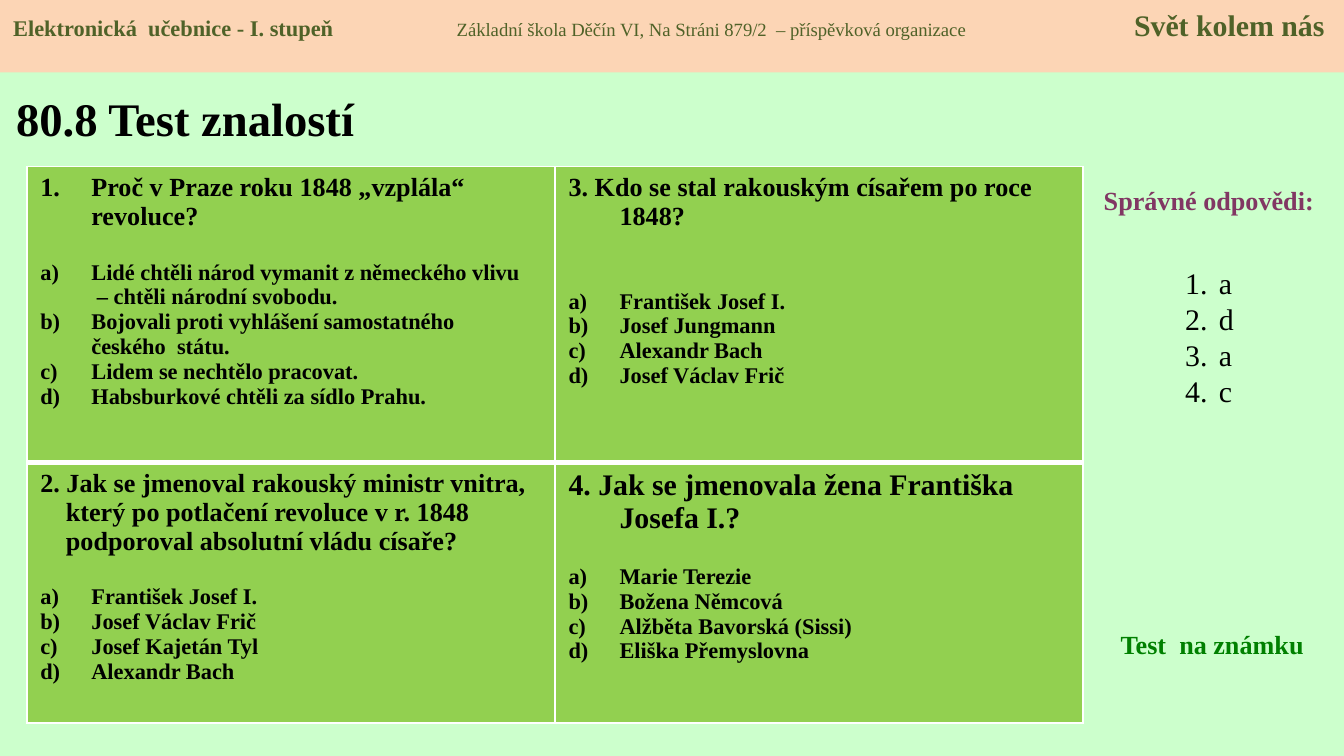
from lxml.etree import SubElement
from pptx import Presentation
from pptx.dml.color import RGBColor
from pptx.enum.shapes import MSO_SHAPE
from pptx.enum.text import MSO_ANCHOR, MSO_AUTO_SIZE, PP_ALIGN
from pptx.oxml.ns import qn
from pptx.util import Inches, Pt

COLORS = {
    "page": "CCFFCC",
    "banner": "FCD5B5",
    "banner_text": "4F6228",
    "cell": "92D050",
    "border": "FFFFFF",
    "text": "000000",
    "answers": "813763",
    "grade": "008000",
}


def add_span(para, text, size, color="text", bold=True):
    span = para.add_run()
    span.text = text
    look = {"name": "Times New Roman", "size": Pt(size), "bold": bold}
    for key, value in look.items():
        setattr(span.font, key, value)
    span.font.color.rgb = RGBColor.from_string(COLORS[color])


def indent(para, left, numbering=None):
    settings = para._p.get_or_add_pPr()
    settings.set("marL", str(Inches(left)))
    settings.set("indent", str(-Inches(left)))
    if numbering:
        SubElement(settings, qn("a:buFont"), typeface="+mj-lt")
        SubElement(settings, qn("a:buAutoNum"), type=numbering)


deck = Presentation()
deck.slide_width = Inches(10)
deck.slide_height = Inches(10) * 9 // 16
page = deck.slides.add_slide(deck.slide_layouts[5])
page.background.fill.solid()
page.background.fill.fore_color.rgb = RGBColor.from_string(COLORS["page"])

title = page.shapes.title
place = {"left": 0.02, "top": 0.55, "width": 3.19, "height": 0.65}
for key, value in place.items():
    setattr(title, key, Inches(value))
title.text_frame.auto_size = MSO_AUTO_SIZE.NONE
title.text_frame.vertical_anchor = MSO_ANCHOR.MIDDLE
para = title.text_frame.paragraphs[0]
para.alignment = PP_ALIGN.LEFT
add_span(para, "80.8 Test znalostí", 25)

labels = [
    ("Správné odpovědi:", "answers", 8.05, 1.32, 1.89, PP_ALIGN.CENTER),
    ("Test  na známku", "grade", 8.24, 4.63, 1.57, PP_ALIGN.LEFT),
]
for text, color, left, top, width, alignment in labels:
    box = page.shapes.add_textbox(Inches(left), Inches(top), Inches(width), Inches(0.34))
    para = box.text_frame.paragraphs[0]
    para.alignment = alignment
    add_span(para, text, 14, color)

questions = [
    {"row": 0, "column": 0, "text": "Proč v Praze roku 1848 „vzplála“ revoluce?",
     "size": 14, "hang": 0.38, "numbering": "arabicPeriod", "gap": 15.5,
     "choices": ["Lidé chtěli národ vymanit z německého vlivu\v – chtěli národní svobodu.",
                 "Bojovali proti vyhlášení samostatného\včeského  státu.",
                 "Lidem se nechtělo pracovat.",
                 "Habsburkové chtěli za sídlo Prahu."]},
    {"row": 1, "column": 0,
     "text": "2. Jak se jmenoval rakouský ministr vnitra, který po potlačení revoluce "
             "v r. 1848 podporoval absolutní vládu císaře?",
     "size": 14, "hang": 0.19, "numbering": None, "gap": 15.5,
     "choices": ["František Josef I.", "Josef Václav Frič", "Josef Kajetán Tyl", "Alexandr Bach"]},
    {"row": 0, "column": 1, "text": "3. Kdo se stal rakouským císařem po roce 1848?",
     "size": 14, "hang": 0.38, "numbering": None, "gap": 31,
     "choices": ["František Josef I.", "Josef Jungmann", "Alexandr Bach", "Josef Václav Frič"]},
    {"row": 1, "column": 1, "text": "4. Jak se jmenovala žena Františka Josefa I.?",
     "size": 16, "hang": 0.38, "numbering": None, "gap": 15.5,
     "choices": ["Marie Terezie", "Božena Němcová", "Alžběta Bavorská (Sissi)",
                 "Eliška Přemyslovna"]},
]
test = page.shapes.add_table(2, 2, Inches(0.2), Inches(1.24), Inches(7.86), Inches(4.14)).table
test.first_row = test.horz_banding = False
for row, height in zip(test.rows, (2.2, 1.94)):
    row.height = Inches(height)

for question in questions:
    cell = test.cell(question["row"], question["column"])
    inner_side = "lnT" if question["row"] else "lnB"
    settings = cell._tc.get_or_add_tcPr()
    for side in ("lnL", "lnR", "lnT", "lnB"):
        width = Pt(3 if side == inner_side else 1)
        line = SubElement(settings, qn(f"a:{side}"), w=str(width))
        SubElement(SubElement(line, qn("a:solidFill")), qn("a:srgbClr"), val=COLORS["border"])
    cell.fill.solid()
    cell.fill.fore_color.rgb = RGBColor.from_string(COLORS["cell"])
    para = cell.text_frame.paragraphs[0]
    indent(para, question["hang"], question["numbering"])
    add_span(para, question["text"], question["size"])
    for number, choice in enumerate(question["choices"]):
        para = cell.text_frame.add_paragraph()
        if number == 0:
            para.space_before = Pt(question["gap"])
        indent(para, 0.38, "alphaLcParenR")
        for position, text in enumerate(choice.split("\v")):
            if position:
                para.add_line_break()
            add_span(para, text, 12)

key_box = page.shapes.add_textbox(Inches(8.72), Inches(1.65), Inches(0.55), Inches(1.99))
key_box.text_frame.word_wrap = True
key_box.text_frame.margin_top = Inches(0.32)
for number, answer in enumerate("adac"):
    frame = key_box.text_frame
    para = frame.add_paragraph() if number else frame.paragraphs[0]
    indent(para, 0.25, "arabicPeriod")
    add_span(para, answer, 16, bold=False)

banner = page.shapes.add_shape(MSO_SHAPE.RECTANGLE, 0, 0, Inches(10), Inches(0.54))
banner.shadow.inherit = False
banner.fill.solid()
banner.fill.fore_color.rgb = RGBColor.from_string(COLORS["banner"])
banner.line.fill.background()
banner.text_frame.word_wrap = True
banner.text_frame.vertical_anchor = MSO_ANCHOR.TOP
para = banner.text_frame.paragraphs[0]
para.alignment = PP_ALIGN.LEFT
tab_stops = SubElement(para._p.get_or_add_pPr(), qn("a:tabLst"))
for position in (3.3, 8.34):
    SubElement(tab_stops, qn("a:tab"), pos=str(Inches(position)), algn="l")
add_span(para, "Elektronická  učebnice - I. stupeň\t", 12, "banner_text")
add_span(para, "Základní škola Děčín VI, Na Stráni 879/2  – příspěvková organizace\t", 10,
         "banner_text", bold=False)
add_span(para, "Svět kolem nás", 16, "banner_text")

deck.save("out.pptx")
